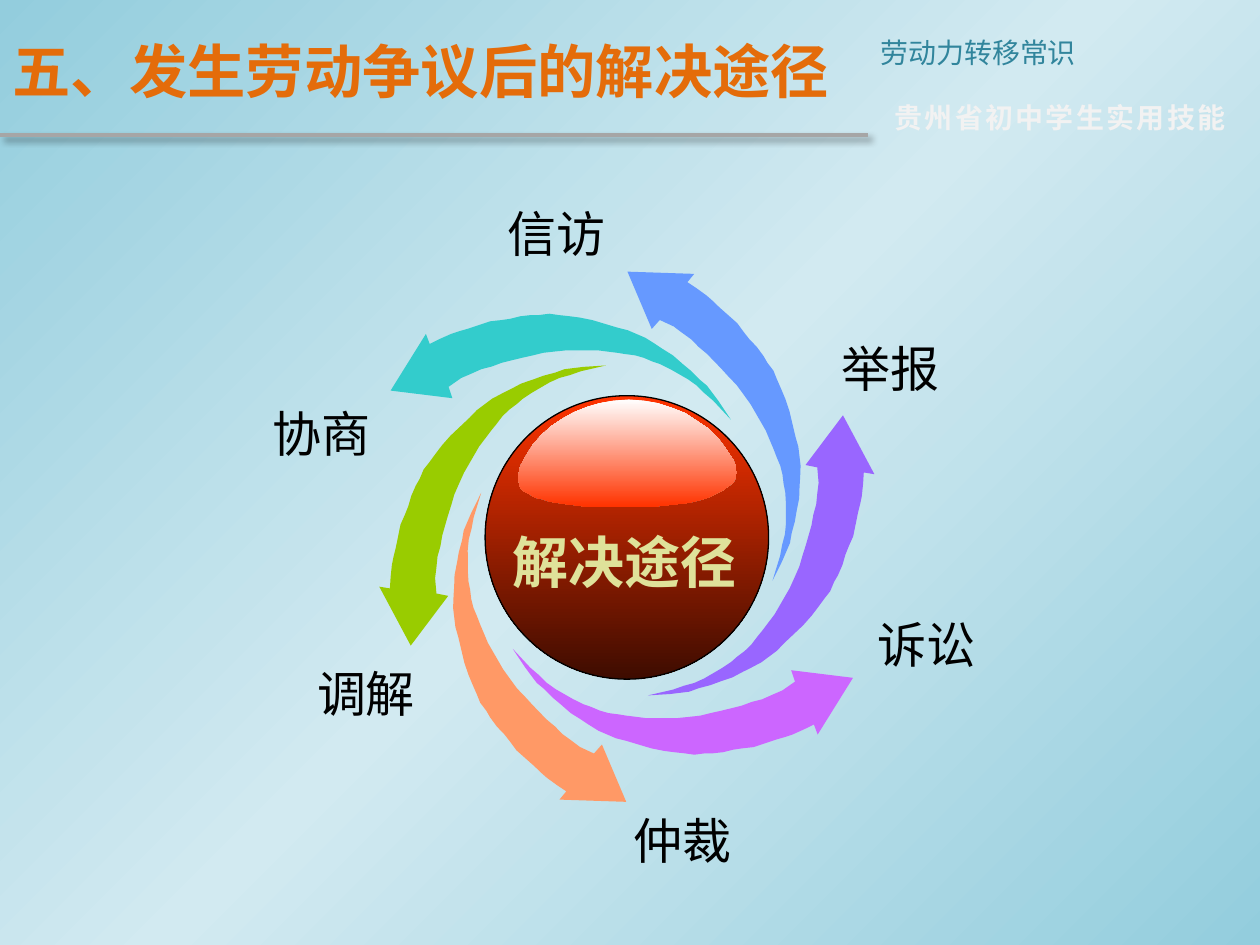
from dataclasses import dataclass

import lxml.etree
import pptx
import pptx.dml.color
import pptx.enum.shapes
import pptx.enum.text
import pptx.oxml.ns
import pptx.util

Inches = pptx.util.Inches
Pt = pptx.util.Pt
qn = pptx.oxml.ns.qn
Align = pptx.enum.text.PP_ALIGN
Anchor = pptx.enum.text.MSO_ANCHOR
FONT = "Noto Sans CJK SC"
HUNDREDTH = Inches(0.01)

ARROW_OUTLINE = [
    (224, 26), (221, 17), (270, 23), (242, 68), (239, 60), (231, 64), (222, 68),
    (216, 70), (209, 72), (200, 75), (191, 78), (182, 79), (175, 80), (167, 82),
    (158, 83), (152, 83), (144, 84), (137, 83), (128, 82), (120, 81), (110, 79),
    (100, 76), (90, 73), (82, 71), (75, 68), (68, 65), (60, 60), (54, 56),
    (46, 51), (38, 44), (32, 39), (25, 32), (19, 27), (16, 23), (10, 15), (0, 0),
    (14, 15), (21, 21), (27, 27), (34, 32), (41, 36), (48, 40), (56, 44),
    (62, 46), (69, 49), (76, 51), (84, 52), (90, 53), (98, 54), (106, 55),
    (113, 55), (120, 55), (130, 55), (140, 54), (149, 53), (157, 51), (166, 49),
    (174, 47), (182, 45), (190, 42), (198, 40), (207, 36), (214, 33), (224, 26),
]
HIGHLIGHT_OUTLINE = [
    (171, 48), (173, 53), (174, 58), (173, 62), (171, 66), (167, 69), (163, 72),
    (157, 75), (151, 78), (144, 80), (136, 82), (127, 83), (118, 84), (108, 85),
    (105, 85), (63, 85), (62, 85), (54, 85), (46, 84), (38, 83), (31, 82),
    (25, 81), (19, 79), (14, 78), (9, 75), (5, 73), (2, 70), (1, 66), (0, 63),
    (0, 62), (1, 58), (2, 53), (7, 44), (12, 36), (19, 28), (27, 21), (36, 15),
    (45, 10), (55, 6), (65, 3), (76, 1), (88, 0), (100, 1), (111, 3), (123, 7),
    (133, 11), (142, 17), (151, 23), (159, 31), (165, 39), (171, 48),
]


@dataclass
class Arrow:
    left: float
    top: float
    color: str


@dataclass
class Label:
    text: str
    left: float
    top: float
    width: float
    height: float
    size: float = 28
    color: str = "000000"
    bold: bool = False
    align: Align = Align.CENTER
    spacing: float = 0


ARROWS = [
    Arrow(4.07, 5.15, "CC66FF"),
    Arrow(2.78, 4.87, "FF9966"),
    Arrow(2.42, 3.44, "99CC00"),
    Arrow(3.10, 2.49, "33CCCC"),
    Arrow(4.47, 2.81, "6699FF"),
    Arrow(4.83, 4.14, "9966FF"),
]
LABELS = [
    Label("劳动力转移常识", 6.89, 0.23, 3.11, 0.37, 16, "31859C", align=Align.LEFT),
    Label("贵州省初中学生实用技能", 7, 0.75, 2.85, 0.37, 16, "F2F2F2", True, Align.LEFT, 1.4),
    Label("诉讼", 6.86, 4.83, 0.99, 0.57),
    Label("举报", 6.57, 2.64, 0.99, 0.57),
    Label("协商", 2.06, 3.15, 0.99, 0.57),
    Label("调解", 2.41, 5.22, 0.99, 0.57),
    Label("仲裁", 4.85, 6.38, 1.14, 0.57),
    Label("信访", 3.92, 1.57, 0.99, 0.57),
]
BALL_LABEL = Label("解决途径", 3.92, 4.14, 2.08, 0.64, 32, "DFE29A", True)
TITLE = Label("五、发生劳动争议后的解决途径", 0, 0.05, 6.89, 1.02, 33.3, "E46C0A", True, Align.LEFT)


def rgb(color: str) -> pptx.dml.color.RGBColor:
    return pptx.dml.color.RGBColor.from_string(color)


def set_gradient(fill, owner, colors: list[str], angle: float) -> None:
    fill.gradient()
    fill.gradient_angle = angle
    stops = owner.find(".//" + qn("a:gsLst"))
    for stop in list(stops):
        stops.remove(stop)
    for index, color in enumerate(colors):
        position = str(round(100000 * index / (len(colors) - 1)))
        stop = lxml.etree.SubElement(stops, qn("a:gs"), pos=position)
        lxml.etree.SubElement(stop, qn("a:srgbClr"), val=color)


def write_label(shape, label: Label) -> None:
    shape.left, shape.top = Inches(label.left), Inches(label.top)
    shape.width, shape.height = Inches(label.width), Inches(label.height)
    frame = shape.text_frame
    frame.text = label.text
    frame.auto_size = pptx.enum.text.MSO_AUTO_SIZE.NONE
    frame.word_wrap = False
    paragraph = frame.paragraphs[0]
    paragraph.alignment = label.align
    font = paragraph.runs[0].font
    font.name, font.size, font.bold = FONT, Pt(label.size), label.bold
    font.color.rgb = rgb(label.color)
    properties = paragraph.runs[0]._r.get_or_add_rPr()
    lxml.etree.SubElement(properties, qn("a:ea"), typeface=FONT)
    if label.spacing:
        properties.set("spc", str(round(label.spacing * 100)))


def add_label(slide, label: Label) -> None:
    write_label(slide.shapes.add_textbox(0, 0, 0, 0), label)


def add_outline(slide, points: list[tuple[int, int]], left: float, top: float):
    builder = slide.shapes.build_freeform(*points[0], scale=HUNDREDTH)
    builder.add_line_segments(points[1:], close=True)
    shape = builder.convert_to_shape(Inches(left), Inches(top))
    shape.shadow.inherit = False
    shape.line.fill.background()
    return shape


def add_arrow(slide, arrow: Arrow, rotation: float) -> None:
    shape = add_outline(slide, ARROW_OUTLINE, arrow.left, arrow.top)
    shape.fill.solid()
    shape.fill.fore_color.rgb = rgb(arrow.color)
    shape.rotation = rotation


def add_title_rule(slide) -> None:
    rule = slide.shapes.add_connector(
        pptx.enum.shapes.MSO_CONNECTOR.STRAIGHT, 0, Inches(1.07), Inches(6.89), Inches(1.07))
    rule.line.color.rgb = rgb("A6A6A6")
    rule.line.width = Pt(2.25)
    effects = lxml.etree.SubElement(rule._element.spPr, qn("a:effectLst"))
    shadow = lxml.etree.SubElement(
        effects, qn("a:outerShdw"), blurRad=str(Pt(4)), dist=str(Pt(3)),
        dir="2700000", algn="tl", rotWithShape="0")
    color = lxml.etree.SubElement(shadow, qn("a:srgbClr"), val="000000")
    lxml.etree.SubElement(color, qn("a:alpha"), val="40000")


def add_ball(slide) -> None:
    ball = slide.shapes.add_shape(
        pptx.enum.shapes.MSO_SHAPE.OVAL, Inches(3.85), Inches(3.14), Inches(2.25), Inches(2.25))
    ball.shadow.inherit = False
    set_gradient(ball.fill, ball._element, ["FF3300", "3E0C00"], 270)
    ball.line.color.rgb = rgb("000000")
    ball.line.width = Pt(0.75)
    highlight = add_outline(slide, HIGHLIGHT_OUTLINE, 4.11, 3.17)
    set_gradient(highlight.fill, highlight._element, ["FFFFFF", "FF3300"], 270)
    add_label(slide, BALL_LABEL)


def main() -> None:
    presentation = pptx.Presentation()
    presentation.slide_width, presentation.slide_height = Inches(10), Inches(7.5)
    slide = presentation.slides.add_slide(presentation.slide_layouts[5])
    set_gradient(slide.background.fill, slide.element, ["93CDDD", "D2EAF1", "93CDDD"], 315)
    write_label(slide.shapes.title, TITLE)
    slide.shapes.title.text_frame.vertical_anchor = Anchor.MIDDLE
    add_title_rule(slide)
    for index, arrow in enumerate(ARROWS):
        add_arrow(slide, arrow, 60 * index)
    for label in LABELS:
        add_label(slide, label)
    add_ball(slide)
    presentation.save("out.pptx")


if __name__ == "__main__":
    main()
